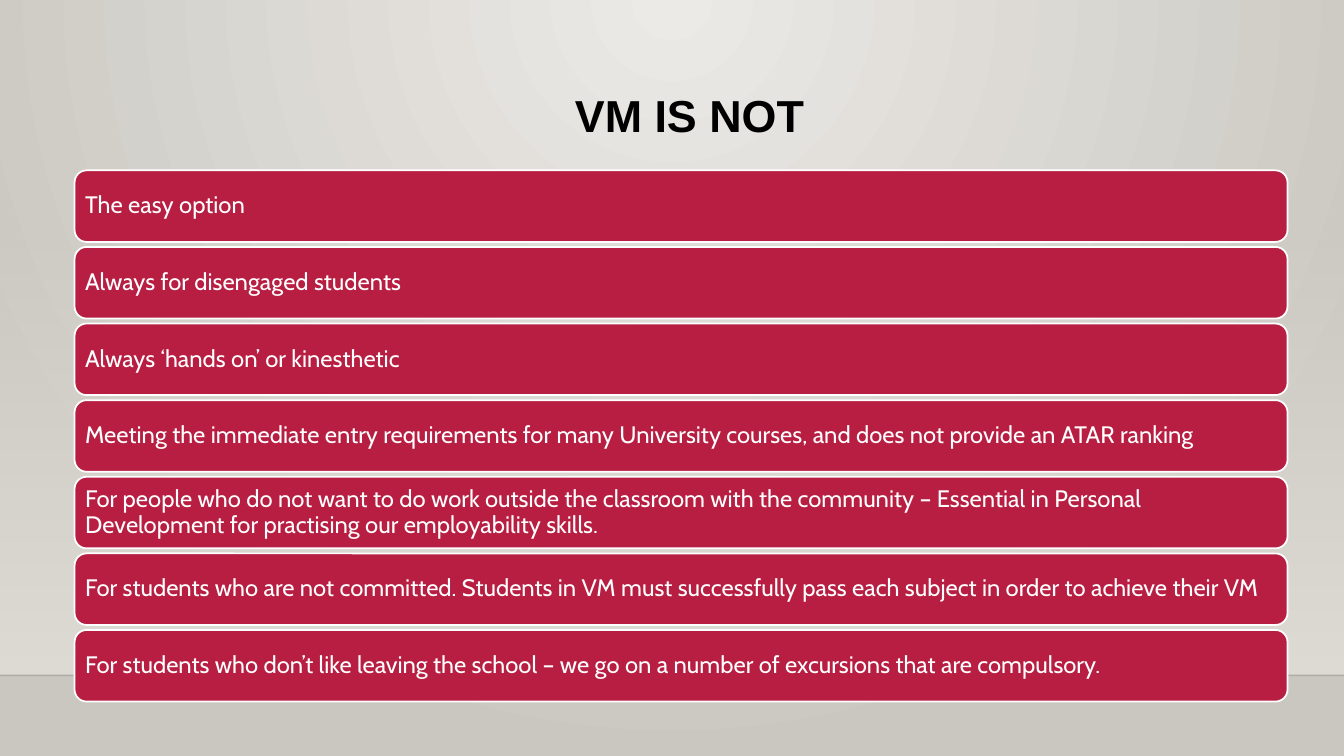
import pptx
import pptx.util
import pptx.dml.color
import pptx.enum.shapes
import pptx.enum.text
import pptx.oxml
import pptx.oxml.ns
import lxml.etree

Inches = pptx.util.Inches
Pt = pptx.util.Pt
SLIDE_WIDTH, SLIDE_HEIGHT = 13.33, 7.5
FLOOR_TOP = 6.7
MISCONCEPTIONS = [
    "The easy option",
    "Always for disengaged students",
    "Always ‘hands on’ or kinesthetic",
    "Meeting the immediate entry requirements for many University courses, "
    "and does not provide an ATAR ranking",
    "For people who do not want to do work outside the classroom with the community – "
    "Essential in Personal Development for practising our employability skills.",
    "For students who are not committed. Students in VM must successfully pass each subject "
    "in order to achieve their VM",
    "For students who don’t like leaving the school – we go on a number of excursions "
    "that are compulsory.",
]


def rgb(hex_colour):
    """Return the colour for a hex string."""
    return pptx.dml.color.RGBColor.from_string(hex_colour)


def set_gradient(fill, start, end):
    """Give a fill a two-stop gradient."""
    fill.gradient()
    for stop, colour, position in zip(fill.gradient_stops, (start, end), (0, 1)):
        stop.color.rgb = rgb(colour)
        stop.position = position


def set_opacity(colour_element, percent):
    """Set the opacity of a colour element."""
    alpha = lxml.etree.SubElement(colour_element, pptx.oxml.ns.qn("a:alpha"))
    alpha.set("val", str(percent * 1000))


def format_text(frame, size, font_name, colour, bold=False):
    """Format the single paragraph of a text frame."""
    paragraph = frame.paragraphs[0]
    paragraph.line_spacing = 0.9
    font = paragraph.runs[0].font
    font.size, font.name, font.bold = Pt(size), font_name, bold
    font.color.rgb = rgb(colour)


def add_backdrop(slide):
    """Draw the radial glow, the wall that fades in and the floor line."""
    set_gradient(slide.background.fill, "ECEAE7", "CAC7C1")
    linear = slide.element.xpath(".//p:bgPr/a:gradFill/a:lin")[0]
    glow = pptx.oxml.parse_xml(
        f'<a:path {pptx.oxml.ns.nsdecls("a")} path="circle">'
        '<a:fillToRect l="43000" t="0" r="43000" b="100000"/></a:path>'
    )
    linear.getparent().replace(linear, glow)

    wall_top = 2.21
    wall = slide.shapes.add_shape(
        pptx.enum.shapes.MSO_SHAPE.RECTANGLE, 0, Inches(wall_top),
        Inches(SLIDE_WIDTH), Inches(FLOOR_TOP - wall_top),
    )
    wall.shadow.inherit = False
    wall.line.fill.background()
    set_gradient(wall.fill, "DFDBD5", "DFDBD5")
    wall.fill.gradient_angle = 270
    set_opacity(wall.element.xpath(".//a:gs/a:srgbClr")[0], 0)

    floor_line = slide.shapes.add_connector(
        pptx.enum.shapes.MSO_CONNECTOR.STRAIGHT, 0, Inches(FLOOR_TOP),
        Inches(SLIDE_WIDTH), Inches(FLOOR_TOP),
    )
    floor_line.line.width = Pt(1)
    floor_line.line.color.rgb = rgb("000001")
    set_opacity(floor_line.element.xpath(".//a:ln//a:srgbClr")[0], 20)
    lxml.etree.SubElement(floor_line.element.spPr, pptx.oxml.ns.qn("a:effectLst"))


def add_title(slide, left, top, width, height):
    """Write the centred heading in the given box."""
    heading = slide.shapes.add_textbox(Inches(left), Inches(top), Inches(width), Inches(height))
    frame = heading.text_frame
    frame.word_wrap = True
    frame.text = "VM IS NOT"
    frame.paragraphs[0].alignment = pptx.enum.text.PP_ALIGN.CENTER
    format_text(frame, 32, "Arial", "000000", bold=True)


def add_misconceptions(slide, left, top, width, height, gap=0.05):
    """Stack one rounded bar per misconception in the given box."""
    pitch = (height + gap) / len(MISCONCEPTIONS)
    for index, misconception in enumerate(MISCONCEPTIONS):
        bar = slide.shapes.add_shape(
            pptx.enum.shapes.MSO_SHAPE.ROUNDED_RECTANGLE, Inches(left),
            Inches(top + index * pitch), Inches(width), Inches(pitch - gap),
        )
        bar.shadow.inherit = False
        bar.fill.solid()
        bar.fill.fore_color.rgb = rgb("B71E42")
        bar.line.color.rgb = rgb("FFFFFF")
        bar.line.width = Pt(1.25)
        frame = bar.text_frame
        frame.word_wrap = True
        frame.vertical_anchor = pptx.enum.text.MSO_ANCHOR.MIDDLE
        frame.margin_left = frame.margin_right = Inches(0.07)
        frame.margin_top = frame.margin_bottom = Inches(0.07)
        frame.text = misconception
        frame.paragraphs[0].alignment = pptx.enum.text.PP_ALIGN.LEFT
        format_text(frame, 17, "Cabin", "FFFFFF")


def main():
    """Build and save the slide."""
    deck = pptx.Presentation()
    deck.slide_width, deck.slide_height = Inches(SLIDE_WIDTH), Inches(SLIDE_HEIGHT)
    slide = deck.slides.add_slide(deck.slide_layouts[6])
    add_backdrop(slide)
    add_title(slide, 1.59, 0.88, 10.5, 1.15)
    add_misconceptions(slide, 0.74, 1.69, 12.03, 5.27)
    deck.save("out.pptx")


if __name__ == "__main__":
    main()
